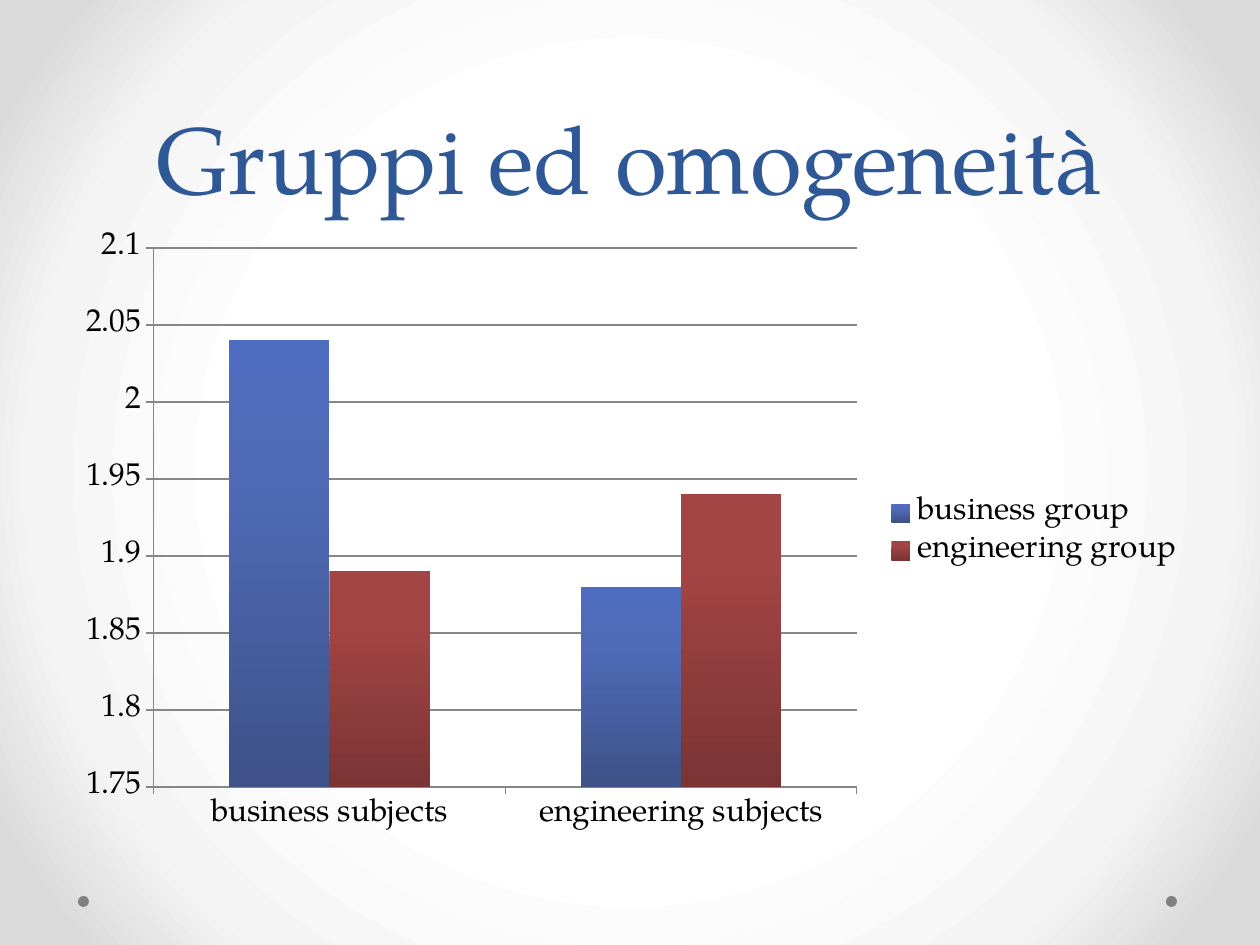
from lxml.etree import fromstring
from pptx import Presentation
from pptx.chart.data import CategoryChartData
from pptx.dml.color import RGBColor
from pptx.enum.chart import XL_CHART_TYPE, XL_LEGEND_POSITION, XL_TICK_MARK
from pptx.enum.shapes import MSO_SHAPE
from pptx.enum.text import MSO_ANCHOR, PP_ALIGN
from pptx.oxml.ns import nsdecls, qn
from pptx.util import Pt

SCALE = 914400 / 126
FONT = "TeX Gyre Pagella"
COLORS = {"title": "2F5897", "text": "000000", "dot": "808080", "grid": "868686"}
BACKDROP = [(50, "FFFFFF"), (76, "F4F4F4"), (92, "DADADA")]
BARS = {
    "business group": ([2.04, 1.88], [(0, "4F6DC0"), (30, "4F6BB8"), (100, "3E5288")]),
    "engineering group": ([1.89, 1.94], [(0, "A24444"), (30, "A04343"), (100, "7B3434")]),
}
RADIAL = '<a:path path="circle"><a:fillToRect l="50000" t="50000" r="50000" b="50000"/></a:path>'
DOWNWARD = '<a:lin ang="5400000" scaled="0"/>'


def color(name):
    return RGBColor.from_string(COLORS[name])


def assign(target, values):
    for name, value in values.items():
        setattr(target, name, value)


def gradient(stops, direction):
    marks = "".join(f'<a:gs pos="{at * 1000}"><a:srgbClr val="{shade}"/></a:gs>' for at, shade in stops)
    return f'<a:gradFill {nsdecls("a")} rotWithShape="1"><a:gsLst>{marks}</a:gsLst>{direction}</a:gradFill>'


class SlideBuilder:
    def __init__(self, deck):
        self.page = deck.slides.add_slide(deck.slide_layouts[5])

    def px(self, *lengths):
        return [round(length * SCALE) for length in lengths]

    def backdrop(self, stops):
        self.page.element.cSld.insert(0, fromstring(
            f'<p:bg {nsdecls("p", "a")}><p:bgPr>{gradient(stops, RADIAL)}<a:effectLst/></p:bgPr></p:bg>'))

    def title(self, text, *bounds):
        box = self.page.shapes.title
        assign(box, dict(zip(("left", "top", "width", "height"), self.px(*bounds))))
        assign(box.text_frame, {"text": text, "vertical_anchor": MSO_ANCHOR.BOTTOM, "word_wrap": True})
        para = box.text_frame.paragraphs[0]
        assign(para, {"alignment": PP_ALIGN.CENTER, "line_spacing": Pt(58)})
        span = para.runs[0]
        assign(span.font, {"name": FONT, "size": Pt(54)})
        span.font.color.rgb = color("title")

    def dot(self, left, top, size):
        dot = self.page.shapes.add_shape(MSO_SHAPE.OVAL, *self.px(left, top, size, size))
        dot.shadow.inherit = False
        dot.fill.solid()
        dot.fill.fore_color.rgb = color("dot")
        dot.line.fill.background()

    def column_chart(self, categories, bars, *bounds):
        data = CategoryChartData()
        data.categories = categories
        for name, (values, _) in bars.items():
            data.add_series(name, values)
        chart = self.page.shapes.add_chart(XL_CHART_TYPE.COLUMN_CLUSTERED, *self.px(*bounds), data).chart
        assign(chart, {"has_title": False, "has_legend": True})
        assign(chart.font, {"name": FONT, "size": Pt(18)})
        chart.font.color.rgb = color("text")
        assign(chart.legend, {"position": XL_LEGEND_POSITION.RIGHT, "include_in_layout": False})

        # Axes and gridlines
        axis = chart.value_axis
        assign(axis, {"minimum_scale": 1.75, "maximum_scale": 2.1, "major_unit": 0.05,
                      "has_major_gridlines": True})
        assign(axis.tick_labels, {"number_format": "General", "number_format_is_linked": False})
        for part in (axis, chart.category_axis):
            part.major_tick_mark = XL_TICK_MARK.OUTSIDE
        for part in (axis, axis.major_gridlines, chart.category_axis):
            part.format.line.color.rgb = color("grid")
            part.format.line.width = Pt(0.75)

        # Bars
        plot = chart.plots[0]
        assign(plot, {"gap_width": 150, "overlap": 0, "vary_by_categories": False})
        for series, (_, stops) in zip(plot.series, bars.values()):
            series.invert_if_negative = False
            series._element.get_or_add_spPr().append(fromstring(gradient(stops, DOWNWARD)))
        self.place_plot(chart, x=0.08, y=0.045, w=0.62, h=0.864)

    def place_plot(self, chart, **fractions):
        area = chart._chartSpace.chart.plotArea
        for layout in area.findall(qn("c:layout")):
            area.remove(layout)
        sizes = "".join(f'<c:{key} val="{value}"/>' for key, value in fractions.items())
        area.insert(0, fromstring(
            f'<c:layout {nsdecls("c")}><c:manualLayout><c:layoutTarget val="inner"/>'
            f'<c:xMode val="edge"/><c:yMode val="edge"/>{sizes}</c:manualLayout></c:layout>'))


deck = Presentation()
deck.slide_width, deck.slide_height = round(1260 * SCALE), round(945 * SCALE)
slide = SlideBuilder(deck)

# Background and corner dots
slide.backdrop(BACKDROP)
for left in (1166, 78):
    slide.dot(left, 896, 11)

# Title and chart
slide.title("Gruppi ed omogeneità", 63, 0, 1134, 220)
slide.column_chart(["business subjects", "engineering subjects"], BARS, 63, 220, 1134, 624)

deck.save("out.pptx")
